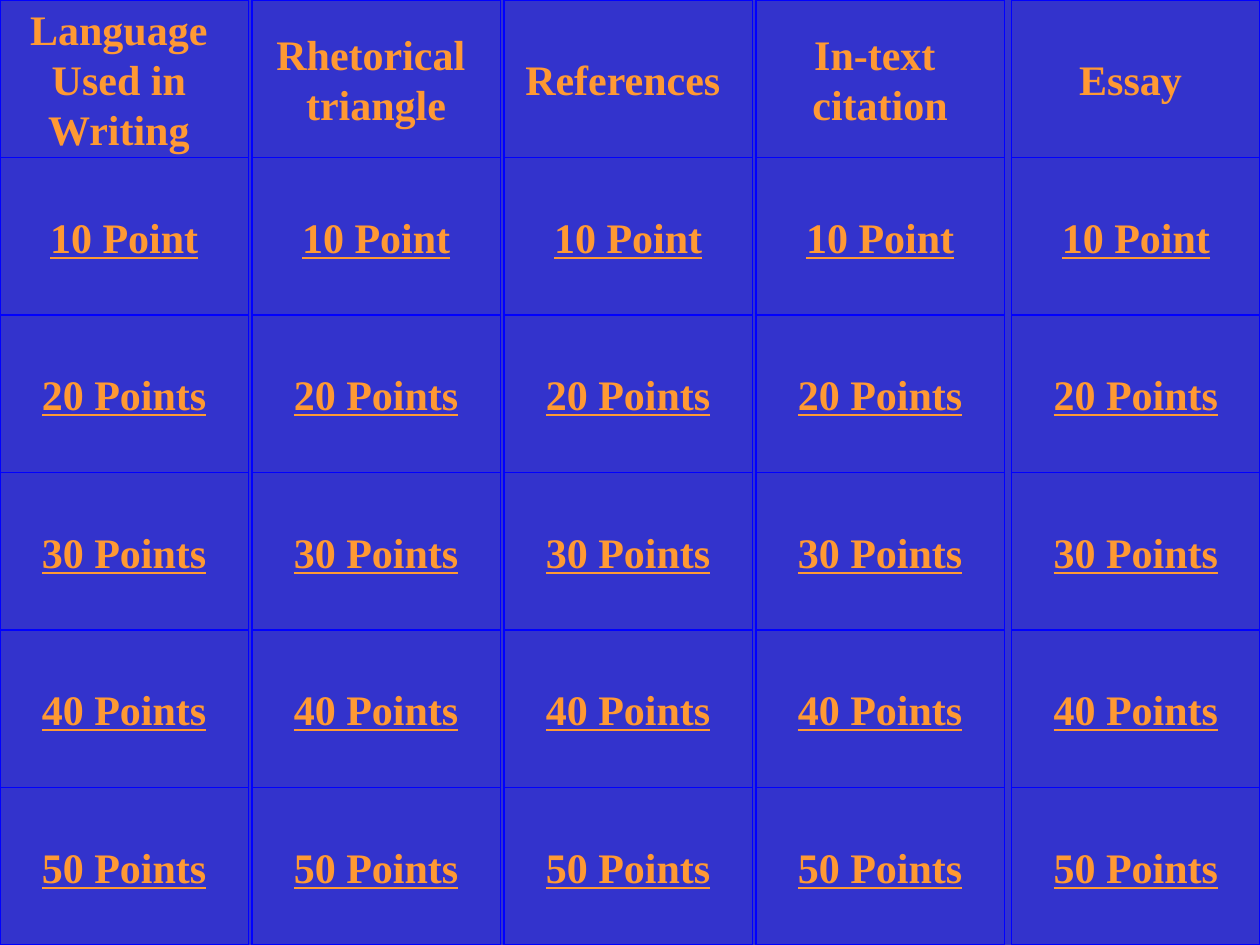
from dataclasses import dataclass

from pptx import Presentation
from pptx.dml.color import RGBColor
from pptx.enum.shapes import MSO_SHAPE
from pptx.enum.text import MSO_ANCHOR, PP_ALIGN
from pptx.util import Inches, Pt


@dataclass(frozen=True)
class Theme:
    """Colours and type of the quiz board."""
    back: RGBColor = RGBColor.from_string("3333CC")
    edge: RGBColor = RGBColor.from_string("0000FF")
    ink: RGBColor = RGBColor.from_string("FF9933")
    face: str = "Times New Roman"
    size: Pt = Pt(24)
    rule: Pt = Pt(0.75)


THEME = Theme()
LEFTS = (0, 2, 4, 6, 8.03)
WIDE, HIGH = 1.97, 1.25
HEADS = (
    ("Language ", "Used in ", "Writing "),
    ("Rhetorical ", "triangle"),
    ("References ",),
    ("In-text ", "citation"),
    ("Essay ",),
)
SCORES = ("10 Point", "20 Points", "30 Points", "40 Points", "50 Points")


def apply(item, form):
    """Set each named value of a format dict on an object."""
    for name, value in form.items():
        setattr(item, name, value)


def paint(fill, color):
    """Give a fill one solid colour."""
    fill.solid()
    fill.fore_color.rgb = color


def write(frame, lines, under):
    """Put centred lines of text into a frame."""
    apply(frame, {"word_wrap": False, "vertical_anchor": MSO_ANCHOR.MIDDLE})
    form = {"name": THEME.face, "size": THEME.size, "bold": True}
    if under:
        form["underline"] = True
    for index, line in enumerate(lines):
        para = frame.add_paragraph() if index else frame.paragraphs[0]
        para.alignment = PP_ALIGN.CENTER
        run = para.add_run()
        run.text = line
        apply(run.font, form)
        run.font.color.rgb = THEME.ink


def add_cell(slide, left, row, lines, under=False):
    """Add one button of the board with its text."""
    cell = slide.shapes.add_shape(
        MSO_SHAPE.ACTION_BUTTON_CUSTOM,
        Inches(left), Inches(row * HIGH), Inches(WIDE), Inches(HIGH))
    cell.shadow.inherit = False
    paint(cell.fill, THEME.back)
    paint(cell.line.fill, THEME.edge)
    cell.line.width = THEME.rule
    write(cell.text_frame, lines, under)


def main():
    """Build the quiz board and save it."""
    deck = Presentation()
    apply(deck, {"slide_width": Inches(10), "slide_height": Inches(7.5)})
    slide = deck.slides.add_slide(deck.slide_layouts[6])
    paint(slide.background.fill, THEME.back)
    for left, head in zip(LEFTS, HEADS):
        add_cell(slide, left, 0, head)
        for row, score in enumerate(SCORES, 1):
            add_cell(slide, left, row, (score,), under=True)
    deck.save("out.pptx")


if __name__ == "__main__":
    main()
